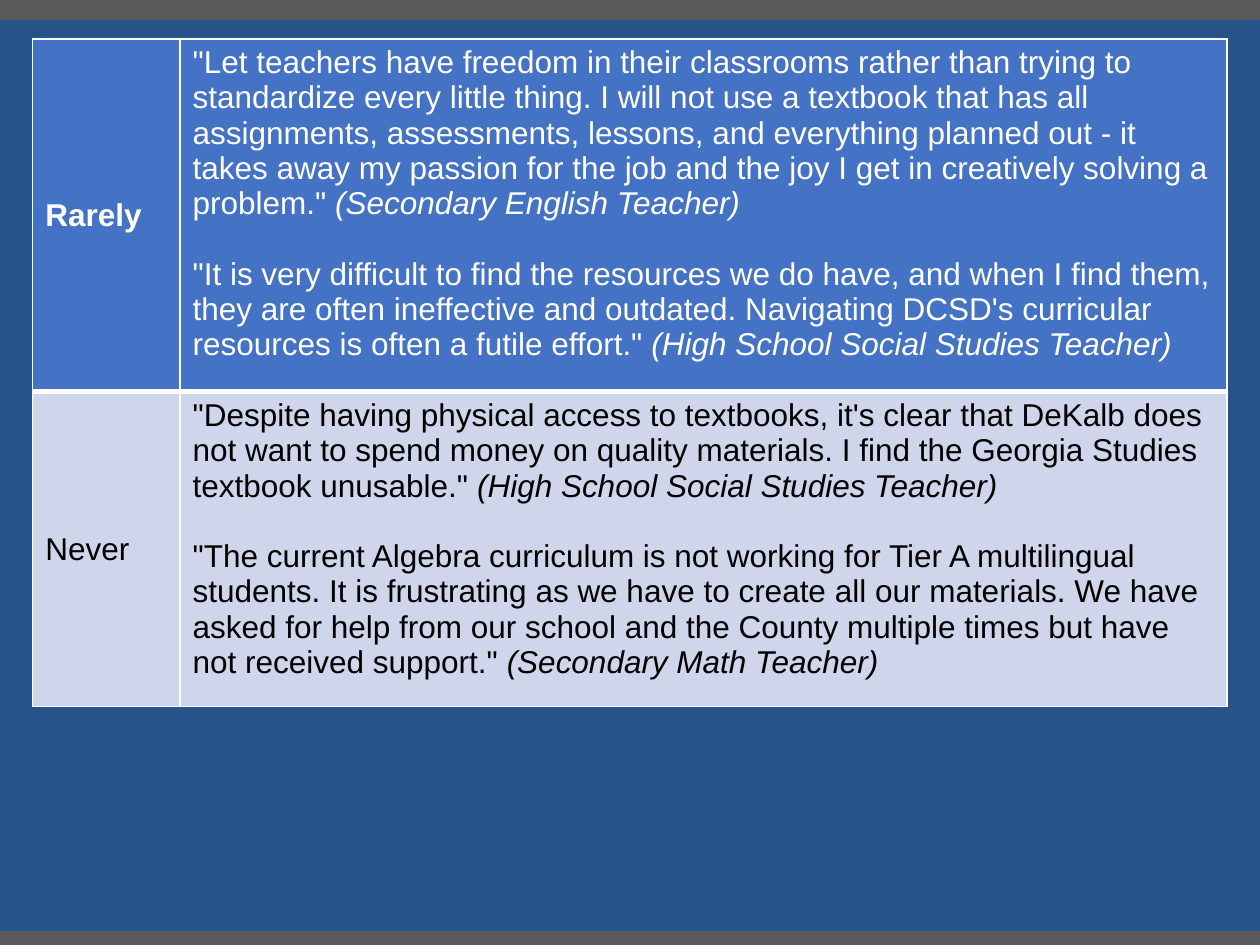
from pptx import Presentation
from pptx.dml.color import RGBColor as Rgb
from pptx.enum.shapes import MSO_SHAPE as Shape
from pptx.enum.text import MSO_ANCHOR as Anchor
from pptx.oxml import parse_xml
from pptx.oxml.ns import nsdecls
from pptx.util import Pt

COLORS = {
    "background": "26538A",
    "bar": "595959",
    "rarely": "4472C4",
    "never": "CFD5EA",
    "white": "FFFFFF",
    "black": "000000",
}
SLIDE_WIDTH, SLIDE_HEIGHT = 720, 540
COLUMN_WIDTHS = (84.2, 598.3)
THIN, THICK = 1, 3

# Each quote is paired with the teacher who gave it.
ANSWERS = [
    {
        "label": "Rarely", "fill": "rarely", "color": "white", "bold": True, "height": 201.6,
        "borders": {"L": THIN, "R": THIN, "T": THIN, "B": THICK},
        "quotes": [
            ('"Let teachers have freedom in their classrooms rather than trying to standardize '
             'every little thing. I will not use a textbook that has all assignments, assessments, '
             'lessons, and everything planned out - it takes away my passion for the job and the '
             'joy I get in creatively solving a problem." ',
             "(Secondary English Teacher)"),
            ('"It is very difficult to find the resources we do have, and when I find them, they '
             "are often ineffective and outdated. Navigating DCSD's curricular resources is often "
             'a futile effort." ',
             "(High School Social Studies Teacher)"),
        ],
    },
    {
        "label": "Never", "fill": "never", "color": "black", "bold": False, "height": 180,
        "borders": {"L": THIN, "R": THIN, "T": THICK, "B": THIN},
        "quotes": [
            ('"Despite having physical access to textbooks, it\'s clear that DeKalb does not want '
             'to spend money on quality materials. I find the Georgia Studies textbook unusable." ',
             "(High School Social Studies Teacher)"),
            ('"The current Algebra curriculum is not working for Tier A multilingual students. It '
             'is frustrating as we have to create all our materials. We have asked for help from '
             'our school and the County multiple times but have not received support." ',
             "(Secondary Math Teacher)"),
        ],
    },
]


class SlideBuilder:
    """Holds the text style and the slide being filled."""

    text_format = {"name": "Arial", "size": Pt(18), "bold": False, "italic": False}
    quote_gap = Pt(20.1)

    def __init__(self, slide):
        self.slide = slide

    def color(self, name):
        return Rgb.from_string(COLORS[name])

    def background(self, color):
        fill = self.slide.background.fill
        fill.solid()
        fill.fore_color.rgb = self.color(color)

    def bar(self, top, height):
        bar = self.slide.shapes.add_shape(
            Shape.RECTANGLE, 0, Pt(top), Pt(SLIDE_WIDTH), Pt(height))
        bar.shadow.inherit = False
        bar.fill.solid()
        bar.fill.fore_color.rgb = self.color("bar")
        bar.line.fill.background()

    def run(self, paragraph, text, color, **changes):
        run = paragraph.add_run()
        run.text = text
        for attribute, value in {**self.text_format, **changes}.items():
            setattr(run.font, attribute, value)
        run.font.color.rgb = self.color(color)

    def style_cell(self, cell, fill, borders):
        """Add the borders before the fill, as the schema orders them."""
        properties = cell._tc.get_or_add_tcPr()
        for side, width in borders.items():
            properties.append(parse_xml(
                f'<a:ln{side} {nsdecls("a")} w="{Pt(width)}"><a:solidFill>'
                f'<a:srgbClr val="{COLORS["white"]}"/></a:solidFill></a:ln{side}>'))
        cell.fill.solid()
        cell.fill.fore_color.rgb = self.color(fill)

    def quotes(self, cell, quotes, color):
        frame = cell.text_frame
        for index, (quote, teacher) in enumerate(quotes):
            paragraph = frame.add_paragraph() if index else frame.paragraphs[0]
            if index:
                paragraph.space_before = self.quote_gap
            self.run(paragraph, quote, color)
            self.run(paragraph, teacher, color, italic=True)

    def answer_table(self, left, top, answers):
        table = self.slide.shapes.add_table(
            len(answers), len(COLUMN_WIDTHS), Pt(left), Pt(top), Pt(sum(COLUMN_WIDTHS)),
            Pt(sum(answer["height"] for answer in answers))).table
        table.first_row = table.horz_banding = False
        for column, width in zip(table.columns, COLUMN_WIDTHS):
            column.width = Pt(width)
        for row, answer in zip(table.rows, answers):
            row.height = Pt(answer["height"])
            label_cell, quote_cell = row.cells
            for cell in row.cells:
                self.style_cell(cell, answer["fill"], answer["borders"])
            label_cell.vertical_anchor = Anchor.MIDDLE
            self.run(label_cell.text_frame.paragraphs[0], answer["label"],
                     answer["color"], bold=answer["bold"])
            self.quotes(quote_cell, answer["quotes"], answer["color"])


def main():
    deck = Presentation()
    deck.slide_width, deck.slide_height = Pt(SLIDE_WIDTH), Pt(SLIDE_HEIGHT)
    builder = SlideBuilder(deck.slides.add_slide(deck.slide_layouts[6]))
    builder.background("background")
    for top in (532, 0):
        builder.bar(top, 11.5)
    builder.answer_table(18.7, 22.2, ANSWERS)
    deck.save("out.pptx")


if __name__ == "__main__":
    main()
